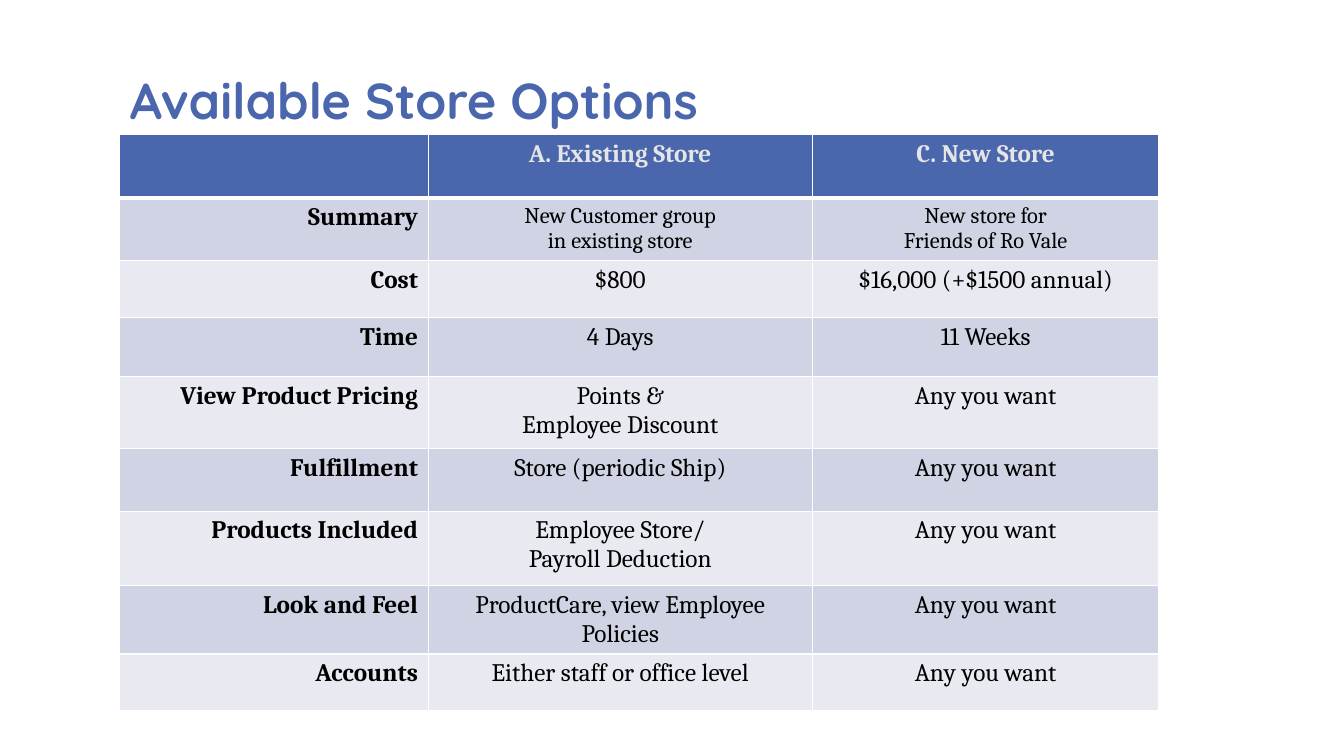
from dataclasses import dataclass

from lxml.etree import SubElement
from pptx import Presentation
from pptx.dml.color import RGBColor
from pptx.enum.text import MSO_ANCHOR, PP_ALIGN
from pptx.oxml.ns import qn
from pptx.util import Cm, Pt


@dataclass(frozen=True)
class Theme:
    accent: str = "4A66AC"
    header_text: str = "E5E5E5"
    text: str = "000000"
    background: str = "FFFFFF"
    border: str = "FFFFFF"
    bands: tuple = ("D0D3E3", "E9EAF1")
    title_font: str = "Quicksand"
    table_font: str = "Cambria"
    title_size: int = 36
    body_size: int = 18
    summary_size: int = 16


THEME = Theme()
LEFT = Cm(3.02)
COLUMN_WIDTHS = (7.77, 9.68, 8.74)
ROW_HEIGHTS = (1.6, 1.57, 1.45, 1.48, 1.82, 1.57, 1.88, 1.72, 1.42)
ANY = "Any you want"
OPTIONS = (
    ("", "A. Existing Store", "C. New Store"),
    ("Summary", "New Customer group\nin existing store",
     "New store for\nFriends of Ro Vale"),
    ("Cost", "$800", "$16,000 (+$1500 annual)"),
    ("Time", "4 Days", "11 Weeks"),
    ("View Product Pricing", "Points &\nEmployee Discount", ANY),
    ("Fulfillment", "Store (periodic Ship)", ANY),
    ("Products Included", "Employee Store/\nPayroll Deduction", ANY),
    ("Look and Feel", "ProductCare, view Employee Policies", ANY),
    ("Accounts", "Either staff or office level", ANY),
)


def add_run(p, text, font, size, color, bold):
    r = p.add_run()
    r.text = text
    r.font.name = font
    r.font.size = Pt(size)
    r.font.bold = bold
    r.font.color.rgb = RGBColor.from_string(color)


def set_title(s, text):
    title = s.shapes.title
    title.left, title.top = LEFT, Cm(1.27)
    title.width, title.height = Cm(24.13), Cm(2.11)
    tf = title.text_frame
    tf.word_wrap = True
    tf.vertical_anchor = MSO_ANCHOR.BOTTOM
    p = tf.paragraphs[0]
    p.alignment = PP_ALIGN.LEFT
    p.line_spacing = 0.8
    add_run(p, text, THEME.title_font, THEME.title_size, THEME.accent, True)


def set_borders(cell, top, bottom):
    """Draw all four sides; top and bottom are widths in points."""
    tc_pr = cell._tc.get_or_add_tcPr()
    for side, width in (("L", 1), ("R", 1), ("T", top), ("B", bottom)):
        line = SubElement(tc_pr, qn(f"a:ln{side}"), w=str(Pt(width)))
        fill = SubElement(line, qn("a:solidFill"))
        SubElement(fill, qn("a:srgbClr"), val=THEME.border)


def fill_cell(cell, text, row, col):
    header, label = row == 0, col == 0
    set_borders(cell, 3 if row == 1 else 1, 3 if header else 1)
    cell.fill.solid()
    band = THEME.accent if header else THEME.bands[(row - 1) % 2]
    cell.fill.fore_color.rgb = RGBColor.from_string(band)
    if not text:
        return
    size = THEME.summary_size if row == 1 and not label else THEME.body_size
    color = THEME.header_text if header else THEME.text
    tf = cell.text_frame
    for i, line in enumerate(text.split("\n")):
        p = tf.add_paragraph() if i else tf.paragraphs[0]
        p.alignment = PP_ALIGN.RIGHT if label else PP_ALIGN.CENTER
        add_run(p, line, THEME.table_font, size, color, header or label)


def add_options_table(s):
    frame = s.shapes.add_table(
        len(OPTIONS), len(COLUMN_WIDTHS), LEFT, Cm(3.39),
        Cm(sum(COLUMN_WIDTHS)), Cm(sum(ROW_HEIGHTS)))
    table = frame.table
    for column, width in zip(table.columns, COLUMN_WIDTHS):
        column.width = Cm(width)
    for i, (row, height) in enumerate(zip(table.rows, ROW_HEIGHTS)):
        row.height = Cm(height)
        for j, text in enumerate(OPTIONS[i]):
            fill_cell(table.cell(i, j), text, i, j)


def main():
    prs = Presentation()
    prs.slide_width, prs.slide_height = Cm(33.87), Cm(19.05)
    s = prs.slides.add_slide(prs.slide_layouts.get_by_name("Title Only"))
    s.background.fill.solid()
    s.background.fill.fore_color.rgb = RGBColor.from_string(THEME.background)
    set_title(s, "Available Store Options")
    add_options_table(s)
    prs.save("out.pptx")


if __name__ == "__main__":
    main()
